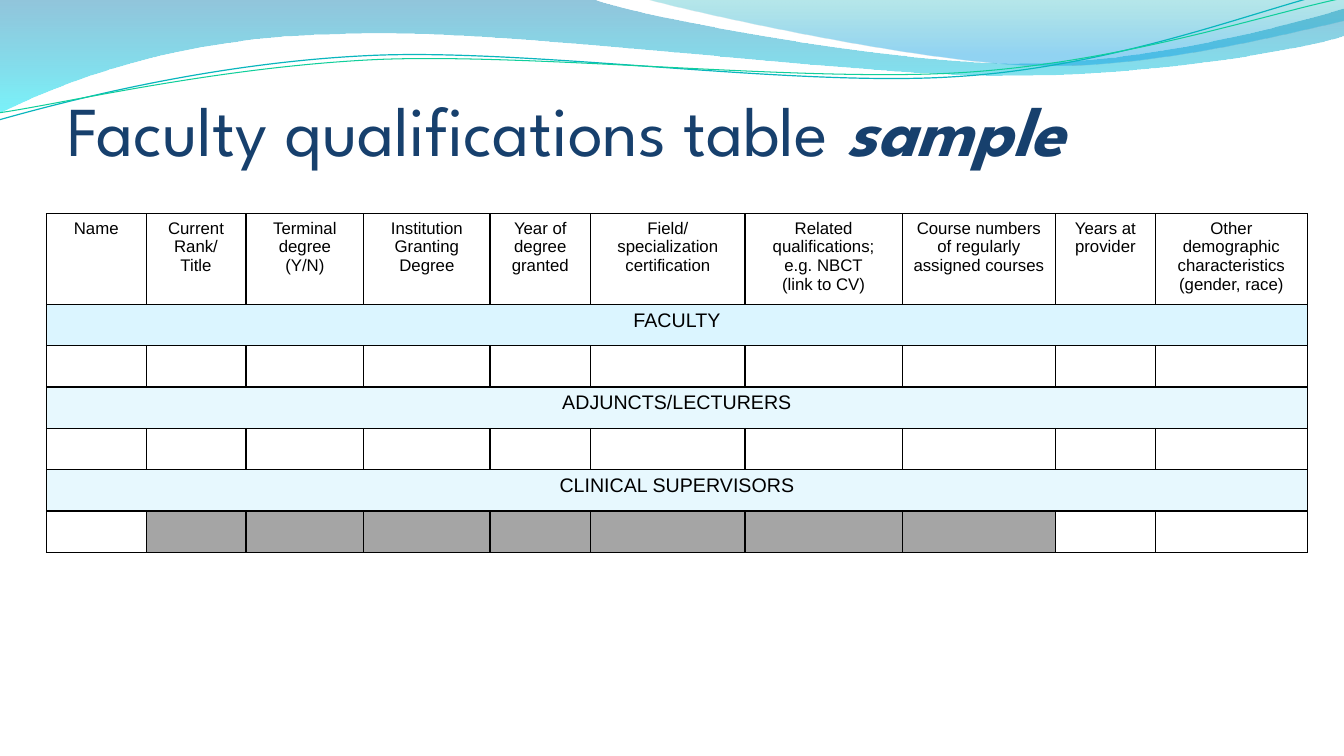
from dataclasses import dataclass
from math import cos, radians, sin

from lxml import etree
from pptx import Presentation
from pptx.dml.color import RGBColor
from pptx.enum.text import MSO_ANCHOR, PP_ALIGN
from pptx.oxml.ns import qn
from pptx.util import Inches, Pt


@dataclass(frozen=True)
class Theme:
    """Colours, fonts and type sizes of the slide."""
    title: str = "17406D"
    ink: str = "000000"
    grey: tuple = ("A5A5A5", 100)
    faculty: tuple = ("4FCEFF", 20)
    section: tuple = ("89DEFE", 20)
    wave: tuple = ((0, "0079AD", 43), (100, "00E9F7", 53))
    crest: tuple = ((0, "00ABB4", 28), (80, "0099E4", 43), (100, "0099E4", 43))
    teal: str = "09B6BE"
    green: str = "10CF9B"
    title_font: str = "League Spartan"
    body_font: str = "Arial"
    title_size: float = 50
    head_size: float = 12
    section_size: float = 14


def add_xml(parent, tag, **attrs):
    """Append a DrawingML element and return it."""
    return etree.SubElement(parent, qn("a:" + tag), {k: str(v) for k, v in attrs.items()})


def add_color(parent, color, alpha=100):
    """Append an RGB colour with its opacity in percent."""
    clr = add_xml(parent, "srgbClr", val=color)
    if alpha < 100:
        add_xml(clr, "alpha", val=alpha * 1000)


def apply(target, values):
    """Set attributes from a dict of format values."""
    for name, value in values.items():
        setattr(target, name, value)


def turn(point, center, degrees):
    """Rotate a point clockwise about a center."""
    a = radians(degrees)
    dx, dy = point[0] - center[0], point[1] - center[1]
    return center[0] + dx * cos(a) - dy * sin(a), center[1] + dx * sin(a) + dy * cos(a)


class Deck:
    """Holds the theme and the current slide."""

    def __init__(self, theme):
        """Start a presentation with one blank slide."""
        self.theme = theme
        self.prs = Presentation()
        apply(self.prs, {"slide_width": Inches(13.33), "slide_height": Inches(7.5)})
        self.s = self.prs.slides.add_slide(self.prs.slide_layouts[6])

    def outline(self, segments, close, center=(0, 0), angle=0):
        """Draw a freeform whose six-number segments are cubic curves."""
        points = [turn(seg[i:i + 2], center, -angle)
                  for seg in segments for i in range(0, len(seg), 2)]
        points = [(Inches(x), Inches(y)) for x, y in points]
        builder = self.s.shapes.build_freeform(*points[0], scale=1.0)
        builder.add_line_segments(points[1:], close=close)
        sp = builder.convert_to_shape()
        sp.shadow.inherit = False
        sp.rotation = angle
        lines = iter(list(sp._element.iter(qn("a:lnTo"))))
        for seg in segments[1:]:
            step = next(lines)
            if len(seg) == 6:
                step.tag = qn("a:cubicBezTo")
                for _ in range(2):
                    other = next(lines)
                    step.append(other[0])
                    other.getparent().remove(other)
        return sp

    def band(self, segments, stops):
        """Draw a wave filled with a vertical gradient."""
        sp = self.outline(segments, True)
        sp.line.fill.background()
        sp.fill.gradient()
        grad = sp.fill._xPr.find(qn("a:gradFill"))
        for child in list(grad):
            grad.remove(child)
        gs_list = add_xml(grad, "gsLst")
        for pos, color, alpha in stops:
            add_color(add_xml(gs_list, "gs", pos=pos * 1000), color, alpha)
        add_xml(grad, "lin", ang=5400000, scaled=0)

    def curve(self, segments, center, color, width):
        """Draw an open, slightly turned curved line."""
        sp = self.outline(segments, False, center, -2.7)
        sp.fill.background()
        sp.line.color.rgb = RGBColor.from_string(color)
        sp.line.width = Pt(width)

    def run(self, p, text, color, **font):
        """Add a formatted run to a paragraph."""
        r = p.add_run()
        r.text = text
        apply(r.font, font)
        r.font.color.rgb = RGBColor.from_string(color)

    def title(self, runs, x, y, w, h):
        """Add the slide title from (text, emphasis) pairs."""
        tf = self.s.shapes.add_textbox(Inches(x), Inches(y), Inches(w), Inches(h)).text_frame
        apply(tf, {"word_wrap": True, "vertical_anchor": MSO_ANCHOR.BOTTOM, "margin_left": 0,
                   "margin_right": 0, "margin_top": Inches(0.05), "margin_bottom": 0})
        for text, strong in runs:
            self.run(tf.paragraphs[0], text, self.theme.title, name=self.theme.title_font,
                     size=Pt(self.theme.title_size), bold=strong, italic=strong)

    def table(self, x, y, height, cols, rows):
        """Add an unbanded table and return it."""
        frame = self.s.shapes.add_table(len(rows), len(cols), Inches(x), Inches(y),
                                        Inches(sum(cols)), Inches(height))
        tbl = frame.table
        apply(tbl, {"first_row": False, "horz_banding": False})
        for col, width in zip(tbl.columns, cols):
            col.width = Inches(width)
        for row, row_height in zip(tbl.rows, rows):
            row.height = Inches(row_height)
        frame.height = Inches(height)
        return tbl

    def cell(self, cell, text="", size=None, fill=None):
        """Write, border and fill one table cell."""
        tf = cell.text_frame
        for i, line in enumerate(text.split("\n") if text else []):
            p = tf.add_paragraph() if i else tf.paragraphs[0]
            p.alignment = PP_ALIGN.CENTER
            self.run(p, line, self.theme.ink, size=Pt(size), name=self.theme.body_font)
        pr = cell._tc.get_or_add_tcPr()
        for side in ("lnL", "lnR", "lnT", "lnB"):
            add_color(add_xml(add_xml(pr, side, w=Pt(1)), "solidFill"), self.theme.ink)
        if fill:
            add_color(add_xml(pr, "solidFill"), *fill)
        else:
            add_xml(pr, "noFill")


def main():
    """Build the faculty qualifications slide."""
    theme = Theme()
    deck = Deck(theme)
    deck.band([(0, 0), (5.87, -0.01), (6.34, 0.17, 8.84, 0.63, 10.11, 0.63),
               (11.37, 0.63, 12.77, 0.26, 13.33, 0.09), (13.34, 0.36),
               (13.11, 0.44, 11.59, 0.76, 9.94, 0.75), (8.29, 0.75, 5.09, 0.28, 3.43, 0.34),
               (1.72, 0.36, 0.61, 0.83, -0.02, 1.13), (0, 0)], theme.wave)
    deck.band([(6.38, -0.01), (6.79, 0.11, 9.09, 0.62, 10.25, 0.65),
               (11.4, 0.69, 12.82, 0.32, 13.33, 0.21), (13.33, 0), (6.38, -0.01)], theme.crest)
    deck.curve([(-0.01, 1.19), (0.63, 1.01, 2.1, 0.62, 3.69, 0.55),
                (5.27, 0.48, 7.89, 0.87, 9.49, 0.76),
                (11.1, 0.66, 12.51, 0.08, 13.3, -0.1)], (6.65, 0.58), theme.teal, 0.85)
    deck.curve([(-0.01, 1.12), (0.62, 1.03, 2.18, 0.66, 3.77, 0.59),
                (5.37, 0.53, 7.96, 0.82, 9.55, 0.72),
                (11.14, 0.62, 12.55, 0.14, 13.33, -0.02)], (6.67, 0.59), theme.green, 0.75)
    deck.title([("Faculty qualifications table ", False), ("sample", True)], 0.67, 0.44, 12, 1.25)

    headings = ["Name", "Current Rank/\nTitle", "Terminal degree\n(Y/N)",
                "Institution Granting Degree", "Year of degree granted",
                "Field/\nspecialization\ncertification",
                "Related\nqualifications;\ne.g. NBCT\n(link to CV)",
                "Course numbers of regularly assigned courses", "Years at provider",
                "Other demographic characteristics\n(gender, race)"]
    sections = {1: ("FACULTY", theme.faculty), 3: ("ADJUNCTS/LECTURERS", theme.section),
                5: ("CLINICAL SUPERVISORS", theme.section)}
    cols = [0.99, 0.99, 1.17, 1.25, 1, 1.53, 1.56, 1.52, 0.99, 1.51]
    rows = [0.41] * 7
    tbl = deck.table(0.46, 2.12, 3.28, cols, rows)
    last_row, last_col = len(rows) - 1, len(cols) - 1
    for c, heading in enumerate(headings):
        deck.cell(tbl.cell(0, c), heading, theme.head_size)
    for r in range(1, len(rows)):
        if r in sections:
            text, fill = sections[r]
            tbl.cell(r, 0).merge(tbl.cell(r, last_col))
            deck.cell(tbl.cell(r, 0), text, theme.section_size, fill)
            continue
        for c in range(len(cols)):
            shaded = r == last_row and 1 <= c <= 7
            deck.cell(tbl.cell(r, c), fill=theme.grey if shaded else None)
    deck.prs.save("out.pptx")


if __name__ == "__main__":
    main()
